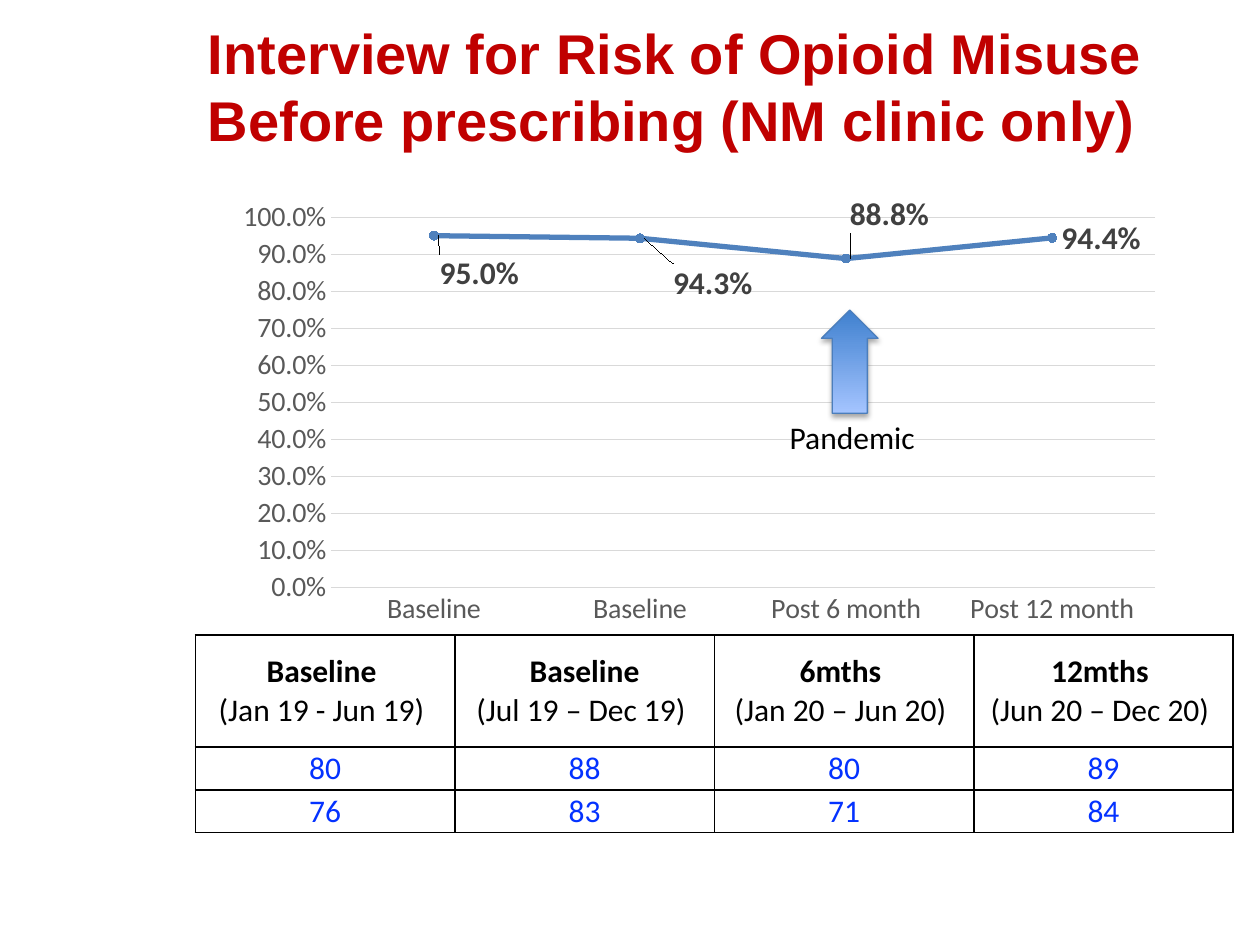
from lxml import etree
from pptx import Presentation
from pptx.chart import data as cd
from pptx.dml import color as dml
from pptx.enum import chart as ch, shapes, text
from pptx.oxml import ns, parse_xml
from pptx.util import Cm, Pt

HUES = {"title": "C00000", "ink": "000000", "count": "0432FF", "line": "4F81BD",
        "grid": "D9D9D9", "axis": "595959", "label": "404040", "edge": "4B7EBC",
        "dark": "3F80CE", "light": "A4C4FF"}
RATES = {"values": (0.95, 0.943, 0.888, 0.944),
         "names": ("Baseline", "Baseline", "Post 6 month", "Post 12 month")}
SHIFTS = ((-0.004, 0.085), (0.025, 0.1), (-0.006, -0.1))
HEADS = (("Baseline ", "(Jan 19 - Jun 19) "), ("Baseline", "(Jul 19 – Dec 19) "),
         ("6mths ", "(Jan 20 – Jun 20) "), ("12mths ", "(Jun 20 – Dec 20) "))
COUNTS = ((80, 88, 80, 89), (76, 83, 71, 84))
PCT = "0.0%"


def rgb(hue):
    return dml.RGBColor.from_string(HUES[hue])


def put(item, **vals):
    for key, val in vals.items():
        setattr(item, key, val)


def style(font, size, hue, bold=False, name="Calibri"):
    put(font, size=Pt(size), bold=bold, name=name)
    font.color.rgb = rgb(hue)


def rule(line, hue, width):
    line.color.rgb = rgb(hue)
    line.width = Pt(width)


def add_text(slide, box, words, anchor, **look):
    frame = slide.shapes.add_textbox(*map(Cm, box)).text_frame
    put(frame, word_wrap=True, vertical_anchor=anchor)
    run = frame.paragraphs[0].add_run()
    run.text = words
    style(run.font, **look)


def lay(parent, index, vals):
    """Insert a manual layout into a chart element."""
    node = etree.Element(ns.qn("c:layout"))
    manual = etree.SubElement(node, ns.qn("c:manualLayout"))
    for key, val in vals.items():
        etree.SubElement(manual, ns.qn("c:" + key)).set("val", str(val))
    parent.insert(index, node)


def move_label(point, x, y):
    label = point.data_label
    style(label.font, 18, "label", True)
    label.position = ch.XL_LABEL_POSITION.RIGHT
    node = label.font._element.getparent().getparent().getparent()
    while node.tag != ns.qn("c:dLbl"):
        node = node.getparent()
    lay(node, 1, {"x": x, "y": y})
    form = etree.Element(ns.qn("c:numFmt"), formatCode=PCT, sourceLinked="0")
    node.insert(2, form)


def add_chart(slide):
    data = cd.CategoryChartData(number_format=PCT)
    data.categories = RATES["names"]
    data.add_series("Series 1", RATES["values"])
    box = map(Cm, (4.57, 3.84, 19.1, 8.99))
    chart = slide.shapes.add_chart(ch.XL_CHART_TYPE.LINE_MARKERS, *box, data).chart
    put(chart, has_legend=False, has_title=False)
    style(chart.font, 10, "ink")

    cat, val = chart.category_axis, chart.value_axis
    for axis in (cat, val):
        put(axis, major_tick_mark=ch.XL_TICK_MARK.NONE,
            minor_tick_mark=ch.XL_TICK_MARK.NONE)
        style(axis.tick_labels.font, 16, "axis")
    rule(cat.format.line, "grid", 0.75)
    put(val, minimum_scale=0, maximum_scale=1, major_unit=0.1)
    put(val.tick_labels, number_format=PCT, number_format_is_linked=False)
    val.format.line.fill.background()
    rule(val.major_gridlines.format.line, "grid", 0.75)

    plot = chart.plots[0]
    plot.vary_by_categories = False
    line = plot.series[0]
    line.smooth = False
    rule(line.format.line, "line", 3)
    mark = line.marker
    put(mark, style=ch.XL_MARKER_STYLE.CIRCLE, size=5)
    mark.format.fill.solid()
    mark.format.fill.fore_color.rgb = rgb("line")
    rule(mark.format.line, "line", 0.75)
    labels = line.data_labels
    put(labels, show_value=True, number_format=PCT, number_format_is_linked=False,
        position=ch.XL_LABEL_POSITION.RIGHT)
    style(labels.font, 18, "label", True)
    for i, shift in enumerate(SHIFTS):
        move_label(line.points[i], *shift)

    area = chart._chartSpace.chart.plotArea
    for old in area.findall(ns.qn("c:layout")):
        area.remove(old)
    lay(area, 0, {"layoutTarget": "inner", "xMode": "edge", "yMode": "edge",
                  "x": 0.11, "y": 0.06, "w": 0.87, "h": 0.83})


def fill_cell(cell, lines, hue, anchor):
    """Write (words, bold) lines and draw the cell's borders."""
    put(cell, margin_left=Cm(0.1), margin_right=Cm(0.1), margin_top=Cm(0.05),
        margin_bottom=Cm(0.05), vertical_anchor=anchor)
    cell.fill.background()
    frame = cell.text_frame
    for i, (words, bold) in enumerate(lines):
        para = frame.add_paragraph() if i else frame.paragraphs[0]
        para.alignment = text.PP_ALIGN.CENTER
        run = para.add_run()
        run.text = words
        style(run.font, 18, hue, bold)
    props = cell._tc.get_or_add_tcPr()
    for i, side in enumerate("LRTB"):
        props.insert(i, parse_xml(
            f'<a:ln{side} {ns.nsdecls("a")} w="{Pt(1)}"><a:solidFill>'
            f'<a:srgbClr val="{HUES["ink"]}"/></a:solidFill></a:ln{side}>'))


def add_table(slide):
    box = map(Cm, (3.94, 12.8, 20.92, 3.96))
    table = slide.shapes.add_table(3, 4, *box).table
    put(table, first_row=False, horz_banding=False)
    for row, tall in zip(table.rows, (2.26, 0.85, 0.85)):
        row.height = Cm(tall)
    mid, top = text.MSO_ANCHOR.MIDDLE, text.MSO_ANCHOR.TOP
    for c, (name, span) in enumerate(HEADS):
        table.columns[c].width = Cm(5.23)
        fill_cell(table.cell(0, c), ((name, True), (span, False)), "ink", mid)
        for r, row in enumerate(COUNTS, 1):
            fill_cell(table.cell(r, c), ((str(row[c]), False),), "count",
                      mid if c == 3 else top)


def add_arrow(slide):
    box = map(Cm, (6.52 * 2.54, 6.25, 1.14, 2.08))
    arrow = slide.shapes.add_shape(shapes.MSO_SHAPE.DOWN_ARROW, *box)
    arrow.rotation = 180
    arrow.adjustments[0] = 0.62
    arrow.fill.gradient()
    arrow.fill.gradient_angle = 90
    for stop, hue, pos in zip(arrow.fill.gradient_stops, ("dark", "light"), (0, 1)):
        stop.color.rgb = rgb(hue)
        stop.position = pos
    rule(arrow.line, "edge", 0.75)
    arrow.shadow.inherit = False
    arrow._element.spPr.find(ns.qn("a:effectLst")).append(parse_xml(
        f'<a:outerShdw {ns.nsdecls("a")} blurRad="{Pt(3.1)}" dist="{Pt(1.8)}" '
        f'dir="5400000" rotWithShape="0"><a:srgbClr val="{HUES["ink"]}">'
        '<a:alpha val="35000"/></a:srgbClr></a:outerShdw>'))


def main():
    deck = Presentation()
    put(deck, slide_width=Cm(25.4), slide_height=Cm(19.05))
    slide = deck.slides.add_slide(deck.slide_layouts[6])
    add_text(slide, (3.94, 0.23, 21.23, 3),
             "Interview for Risk of Opioid Misuse Before prescribing (NM clinic only)",
             text.MSO_ANCHOR.MIDDLE, size=32, hue="title", bold=True, name="Arial")
    add_chart(slide)
    add_table(slide)
    add_arrow(slide)
    add_text(slide, (15.67, 8.31, 4.09, 1.07), "Pandemic",
             text.MSO_ANCHOR.TOP, size=18, hue="ink")
    deck.save("out.pptx")


if __name__ == "__main__":
    main()
